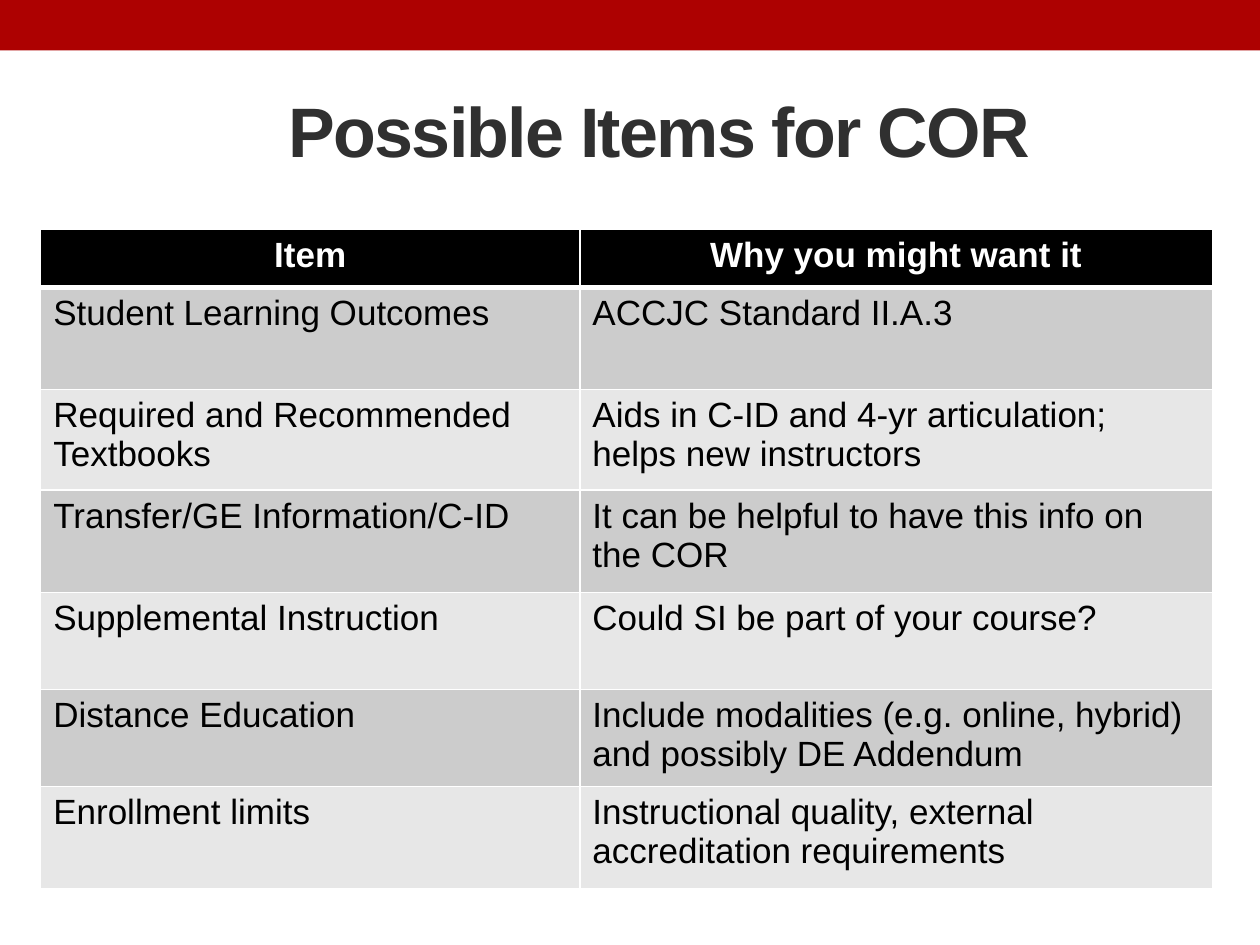
import pptx
import pptx.dml.color
import pptx.enum.shapes
import pptx.enum.text
import pptx.oxml.ns
import pptx.util
from lxml import etree

Cm = pptx.util.Cm
Pt = pptx.util.Pt
PP_ALIGN = pptx.enum.text.PP_ALIGN
qn = pptx.oxml.ns.qn

FONT = "Arial"
WHITE = "FFFFFF"
BLACK = "000000"
BANDS = ("CCCCCC", "E7E7E7")
COLUMN_WIDTHS = (10.87, 12.75)
ROW_HEIGHTS = (1.17, 2.06, 2.03, 2.06, 1.96, 1.96, 2.06)
ROWS = (
    ("Item", "Why you might want it"),
    ("Student Learning Outcomes", "ACCJC Standard II.A.3"),
    ("Required and Recommended Textbooks",
     "Aids in C-ID and 4-yr articulation; helps new instructors"),
    ("Transfer/GE Information/C-ID",
     "It can be helpful to have this info on the COR"),
    ("Supplemental Instruction", "Could SI be part of your course?"),
    ("Distance Education",
     "Include modalities (e.g. online, hybrid) and possibly DE Addendum"),
    ("Enrollment limits",
     "Instructional quality, external accreditation requirements"),
)


def rgb(value):
    return pptx.dml.color.RGBColor.from_string(value)


def set_text(tf, text, size, color, bold, align):
    tf.text = text
    tf.word_wrap = True
    p = tf.paragraphs[0]
    p.alignment = align
    r = p.runs[0]
    r.font.name = FONT
    r.font.size = Pt(size)
    r.font.bold = bold
    r.font.color.rgb = rgb(color)
    return r


def add_bar(s):
    sp = s.shapes.add_shape(pptx.enum.shapes.MSO_SHAPE.RECTANGLE,
                            0, 0, Cm(25.4), Cm(1.02))
    sp.shadow.inherit = False
    sp.fill.solid()
    sp.fill.fore_color.rgb = rgb("AD0101")
    sp.line.fill.background()


def add_title(s, text):
    sp = s.shapes.title
    sp.left, sp.top, sp.width, sp.height = Cm(3.51), Cm(0.91), Cm(19.56), Cm(3.4)
    tf = sp.text_frame
    r = set_text(tf, text, 40, "303030", True, PP_ALIGN.CENTER)
    tf.vertical_anchor = pptx.enum.text.MSO_ANCHOR.MIDDLE
    r.font._element.set("spc", "-100")


def set_borders(cell, top, bottom):
    tc_pr = cell._tc.get_or_add_tcPr()
    for side, width in (("L", 1), ("R", 1), ("T", top), ("B", bottom)):
        ln = etree.SubElement(tc_pr, qn(f"a:ln{side}"), w=str(Pt(width)))
        fill = etree.SubElement(ln, qn("a:solidFill"))
        etree.SubElement(fill, qn("a:srgbClr"), val=WHITE)


def format_cell(cell, text, row):
    header = row == 0
    set_borders(cell, 3 if row == 1 else 1, 3 if header else 1)
    cell.fill.solid()
    cell.fill.fore_color.rgb = rgb(BLACK if header else BANDS[(row - 1) % 2])
    set_text(cell.text_frame, text, 20, WHITE if header else BLACK, header,
             PP_ALIGN.CENTER if header else PP_ALIGN.LEFT)


def add_items_table(s):
    table = s.shapes.add_table(
        len(ROWS), len(COLUMN_WIDTHS), Cm(0.82), Cm(4.62),
        Cm(sum(COLUMN_WIDTHS)), Cm(sum(ROW_HEIGHTS))).table
    for column, width in zip(table.columns, COLUMN_WIDTHS):
        column.width = Cm(width)
    for i, (height, texts) in enumerate(zip(ROW_HEIGHTS, ROWS)):
        table.rows[i].height = Cm(height)
        for j, text in enumerate(texts):
            format_cell(table.cell(i, j), text, i)


def main():
    prs = pptx.Presentation()
    prs.slide_width, prs.slide_height = Cm(25.4), Cm(19.05)
    s = prs.slides.add_slide(prs.slide_layouts[5])
    add_bar(s)
    add_title(s, "Possible Items for COR")
    add_items_table(s)
    prs.save("out.pptx")


if __name__ == "__main__":
    main()
